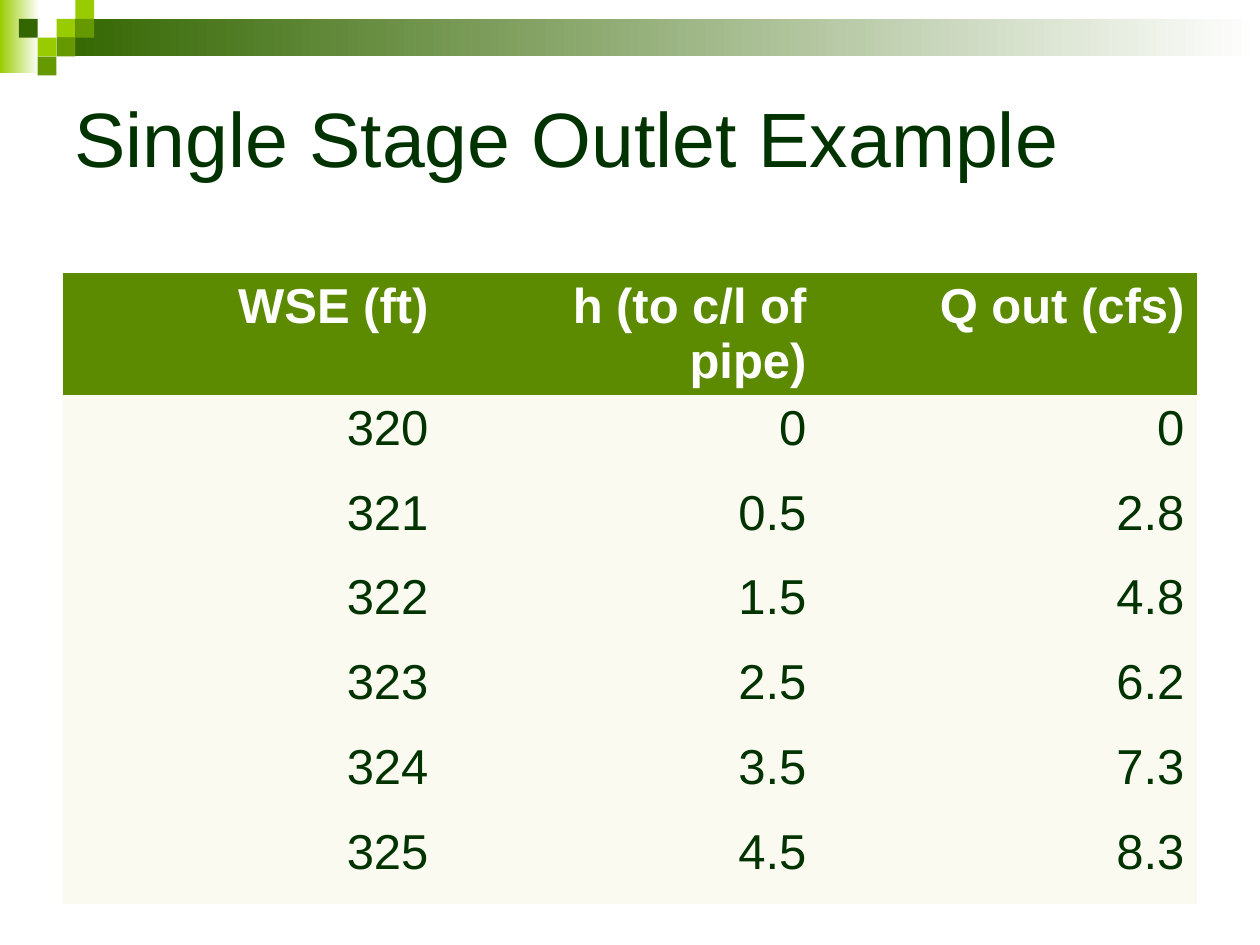
import pptx
import pptx.dml.color
import pptx.enum.shapes
import pptx.enum.text
import pptx.oxml.ns
import pptx.util
from pptx.util import Cm

FONT = "Arial"
COLORS = {
    "lime": "99CC00",
    "green": "669900",
    "forest": "336600",
    "white": "FFFFFF",
    "text": "003300",
    "header": "5C8A00",
    "body": "FAFAF1",
}
NO_GRID_STYLE = "{2D5ABB26-0587-4C30-8999-92F81FD0307C}"
SQUARE = 0.38  # side of one mosaic square, cm

# Mosaic squares: column, row, colour
MOSAIC = [
    (3, 1, "lime"),
    (4, 0, "lime"),
    (4, 1, "green"),
    (2, 2, "lime"),
    (1, 1, "forest"),
    (3, 2, "green"),
    (2, 3, "green"),
]
OUTLET_ROWS = [
    ("WSE (ft)", "h (to c/l of pipe)", "Q out (cfs)"),
    ("320", "0", "0"),
    ("321", "0.5", "2.8"),
    ("322", "1.5", "4.8"),
    ("323", "2.5", "6.2"),
    ("324", "3.5", "7.3"),
    ("325", "4.5", "8.3"),
]


def color(name):
    return pptx.dml.color.RGBColor.from_string(COLORS[name])


def add_run(paragraph, text, size, color_name, bold=False):
    run = paragraph.add_run()
    run.text = text
    run.font.name = FONT
    run.font.size = pptx.util.Pt(size)
    run.font.bold = bold
    run.font.color.rgb = color(color_name)


def add_block(group, left, top, width, height, start, end=None):
    """Add a rectangle in one colour, or fading from start to end."""
    shape = group.shapes.add_shape(
        pptx.enum.shapes.MSO_SHAPE.RECTANGLE,
        Cm(left), Cm(top), Cm(width), Cm(height))
    shape.shadow.inherit = False
    shape.line.fill.background()
    if end is None:
        shape.fill.solid()
        shape.fill.fore_color.rgb = color(start)
    else:
        shape.fill.gradient()
        shape.fill.gradient_angle = 0
        for stop, name in zip(shape.fill.gradient_stops, (start, end)):
            stop.color.rgb = color(name)


def add_banner(slide, left, top, width):
    group = slide.shapes.add_group_shape()
    # Fading bars
    add_block(group, left, top, 0.79, 1.47, "lime", "white")
    bar_offset = 3 * SQUARE
    add_block(group, left + bar_offset, top + SQUARE,
              width - bar_offset, 2 * SQUARE, "forest", "white")
    # Mosaic
    for column, row, name in MOSAIC:
        add_block(group, left + column * SQUARE, top + row * SQUARE,
                  SQUARE, SQUARE, name)


def place_title(slide, left, top, width, height, text):
    title = slide.shapes.title
    title.left, title.top = Cm(left), Cm(top)
    title.width, title.height = Cm(width), Cm(height)
    frame = title.text_frame
    frame.word_wrap = True
    frame.auto_size = pptx.enum.text.MSO_AUTO_SIZE.NONE
    frame.vertical_anchor = pptx.enum.text.MSO_ANCHOR.BOTTOM
    paragraph = frame.paragraphs[0]
    paragraph.alignment = pptx.enum.text.PP_ALIGN.CENTER
    add_run(paragraph, text, 44, "text")


def add_outlet_table(slide, left, top, width, height, rows):
    table = slide.shapes.add_table(
        len(rows), len(rows[0]), Cm(left), Cm(top), Cm(width), Cm(height)).table
    table.horz_banding = False
    style = table._tbl.tblPr.find(pptx.oxml.ns.qn("a:tableStyleId"))
    style.text = NO_GRID_STYLE

    for row_index, values in enumerate(rows):
        is_header = row_index == 0
        for column_index, value in enumerate(values):
            cell = table.cell(row_index, column_index)
            cell.fill.solid()
            cell.fill.fore_color.rgb = color("header" if is_header else "body")
            paragraph = cell.text_frame.paragraphs[0]
            paragraph.alignment = pptx.enum.text.PP_ALIGN.RIGHT
            add_run(paragraph, value, 28,
                    "white" if is_header else "text", bold=is_header)


def main():
    presentation = pptx.Presentation()
    presentation.slide_width = Cm(25.4)
    presentation.slide_height = Cm(19.05)
    title_only = presentation.slide_layouts[5]
    slide = presentation.slides.add_slide(title_only)

    add_banner(slide, 0, 0, 25.4)
    place_title(slide, 0, 1.27, 22.86, 2.54, "Single Stage Outlet Example")
    add_outlet_table(slide, 1.27, 5.5, 22.86, 11.97, OUTLET_ROWS)

    presentation.save("out.pptx")


if __name__ == "__main__":
    main()
